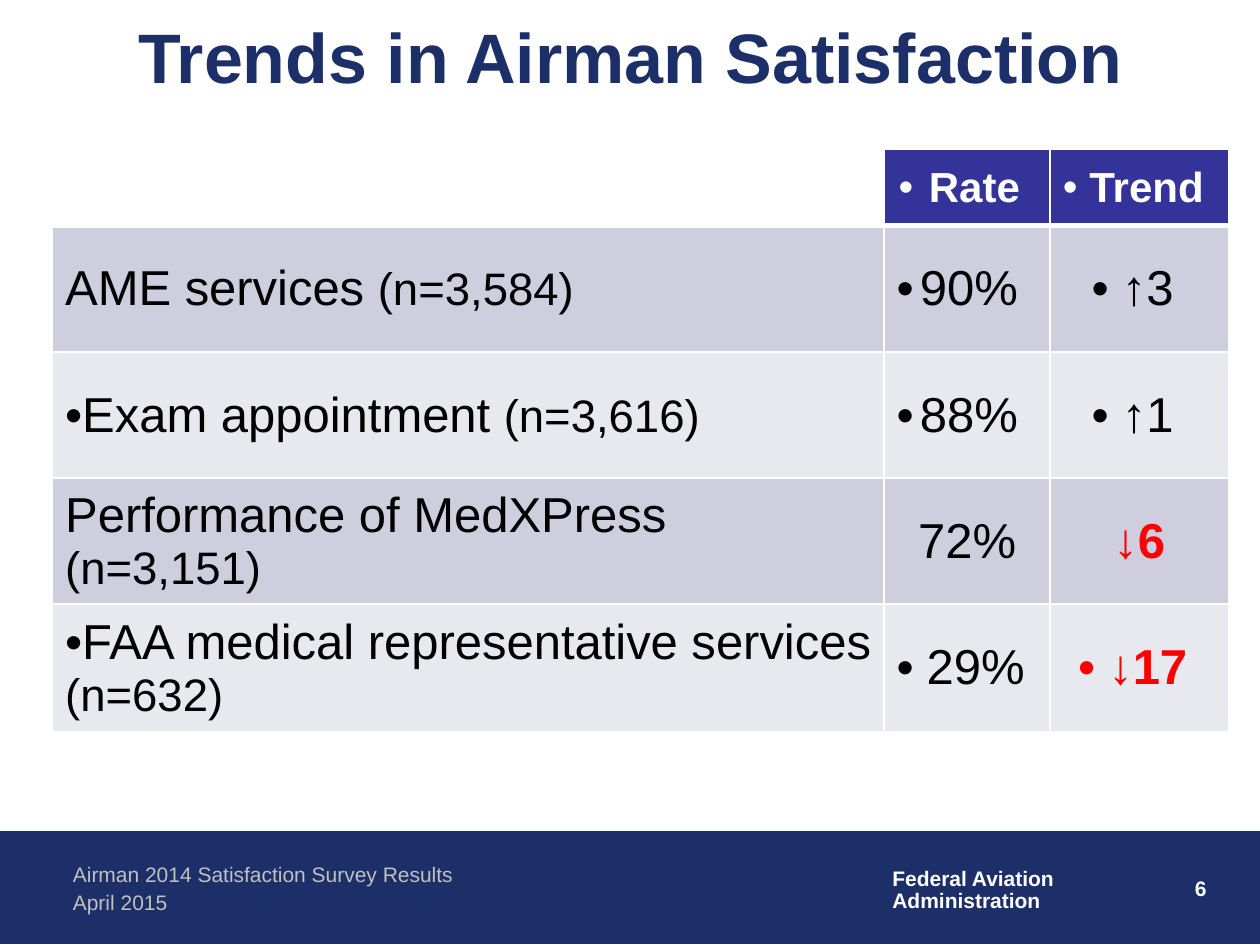
"""Build the airman satisfaction trends slide."""
from dataclasses import dataclass

from lxml.etree import SubElement
from pptx import Presentation
from pptx.dml.color import RGBColor
from pptx.enum.shapes import MSO_SHAPE
from pptx.enum.text import MSO_ANCHOR, PP_ALIGN
from pptx.oxml import parse_xml
from pptx.oxml.ns import nsdecls, qn
from pptx.util import Cm, Pt

NAVY = RGBColor(0x1D, 0x2F, 0x68)
INDIGO = RGBColor(0x33, 0x33, 0x99)
LAVENDER = RGBColor(0xCE, 0xCE, 0xDE)
MIST = RGBColor(0xE8, 0xE8, 0xEF)
SILVER = RGBColor(0xC0, 0xC0, 0xC0)
WHITE = RGBColor(0xFF, 0xFF, 0xFF)
BLACK = RGBColor(0, 0, 0)
RED = RGBColor(0xFF, 0, 0)

COLUMN_WIDTHS = (16.76, 3.35, 3.59)
ROW_HEIGHTS = (1.54, 2.55, 2.54, 2.54, 2.57)
BULLET_INDENT = Cm(-0.61)


@dataclass(frozen=True)
class Span:
    text: str
    size: float
    color: RGBColor = BLACK
    bold: bool = False


@dataclass(frozen=True)
class Rating:
    service: str
    sample: str
    rate: str
    trend: str
    service_bullet: bool = True
    score_bullet: bool = True


@dataclass(frozen=True)
class FooterText:
    lines: tuple[str, ...]
    box: tuple[float, float, float, float]
    color: RGBColor = WHITE
    bold: bool = True
    align: PP_ALIGN = PP_ALIGN.LEFT
    line_spacing: float = 1.0
    wrap: bool = True


RATINGS = (
    Rating("AME services ", "(n=3,584)", "90% ", "↑3", service_bullet=False),
    Rating("Exam appointment ", "(n=3,616)", "88% ", "↑1"),
    Rating("Performance of MedXPress ", "(n=3,151)", "72%", "↓6", False, False),
    Rating("FAA medical representative services ", "(n=632)", "29%", "↓17"),
)
FOOTER_TEXTS = (
    FooterText(("6",), (19.29, 17.52, 5.28, 1.27), align=PP_ALIGN.RIGHT),
    FooterText(("Federal Aviation", "Administration"), (17.74, 17.41, 3.81, 1.12),
               line_spacing=0.85, wrap=False),
    FooterText(("Airman 2014 Satisfaction Survey Results",),
               (1.22, 17.25, 13.28, 0.76), SILVER, False),
    FooterText(("April 2015",), (1.22, 17.81, 10.39, 0.76), SILVER, False),
)


def apply_format(target, values: dict) -> None:
    for attribute, value in values.items():
        setattr(target, attribute, value)


def write_spans(paragraph, spans: tuple[Span, ...], align: PP_ALIGN) -> None:
    paragraph.alignment = align
    for span in spans:
        run = paragraph.add_run()
        run.text = span.text
        apply_format(run.font, {"name": "Arial", "size": Pt(span.size), "bold": span.bold})
        run.font.color.rgb = span.color


def add_bullet(paragraph) -> None:
    properties = paragraph._p.get_or_add_pPr()
    properties.set("marL", "0")
    properties.set("indent", str(int(BULLET_INDENT)))
    SubElement(properties, qn("a:buFont"), typeface="Arial")
    SubElement(properties, qn("a:buChar"), char="•")


def set_borders(cell, top: float, bottom: float) -> None:
    widths = {"lnL": 1, "lnR": 1, "lnT": top, "lnB": bottom}
    properties = cell._tc.get_or_add_tcPr()
    for position, (edge, width) in enumerate(widths.items()):
        properties.insert(position, parse_xml(
            f'<a:{edge} {nsdecls("a")} w="{Pt(width)}"><a:solidFill>'
            f'<a:srgbClr val="{WHITE}"/></a:solidFill></a:{edge}>'))


def fill_cell(cell, spans: tuple[Span, ...], fill: RGBColor, bullet: bool,
              align: PP_ALIGN = PP_ALIGN.CENTER) -> None:
    cell.vertical_anchor = MSO_ANCHOR.MIDDLE
    cell.fill.solid()
    cell.fill.fore_color.rgb = fill
    paragraph = cell.text_frame.paragraphs[0]
    if bullet:
        add_bullet(paragraph)
    write_spans(paragraph, spans, align)


def add_ratings_table(slide) -> None:
    table = slide.shapes.add_table(
        len(ROW_HEIGHTS), len(COLUMN_WIDTHS), Cm(1.06), Cm(3.01),
        Cm(sum(COLUMN_WIDTHS)), Cm(sum(ROW_HEIGHTS))).table
    apply_format(table, {"first_row": False, "horz_banding": False})
    for column, width in zip(table.columns, COLUMN_WIDTHS):
        column.width = Cm(width)
    for row, height in zip(table.rows, ROW_HEIGHTS):
        row.height = Cm(height)

    table.cell(0, 0).fill.background()
    for column, heading in enumerate(("Rate", "Trend"), start=1):
        fill_cell(table.cell(0, column), (Span(heading, 24, WHITE, True),), INDIGO, True)

    for row, rating in enumerate(RATINGS, start=1):
        band = LAVENDER if row % 2 else MIST
        falling = rating.trend.startswith("↓")
        trend = Span(rating.trend, 28, RED if falling else BLACK, falling)
        fill_cell(table.cell(row, 0), (Span(rating.service, 28), Span(rating.sample, 26)),
                  band, rating.service_bullet, PP_ALIGN.LEFT)
        fill_cell(table.cell(row, 1), (Span(rating.rate, 28),), band, rating.score_bullet)
        fill_cell(table.cell(row, 2), (trend,), band, rating.score_bullet)

    for row in range(len(ROW_HEIGHTS)):
        for column in range(len(COLUMN_WIDTHS)):
            set_borders(table.cell(row, column), 3 if row == 1 else 1, 3 if row == 0 else 1)


def add_footer_band(slide) -> None:
    band = slide.shapes.add_shape(MSO_SHAPE.RECTANGLE, 0, Cm(16.76), Cm(25.4), Cm(2.26))
    band.shadow.inherit = False
    band.fill.solid()
    band.fill.fore_color.rgb = NAVY
    band.line.color.rgb = NAVY
    band.line.width = Pt(0.75)


def add_footer_text(slide, footer: FooterText) -> None:
    frame = slide.shapes.add_textbox(*map(Cm, footer.box)).text_frame
    frame.word_wrap = footer.wrap
    for index, line in enumerate(footer.lines):
        paragraph = frame.add_paragraph() if index else frame.paragraphs[0]
        paragraph.line_spacing = footer.line_spacing
        write_spans(paragraph, (Span(line, 12, footer.color, footer.bold),), footer.align)


def add_title(slide) -> None:
    title = slide.shapes.title
    apply_format(title, {"left": Cm(0.93), "top": Cm(0.26),
                         "width": Cm(23.55), "height": Cm(1.7)})
    title.text_frame.vertical_anchor = MSO_ANCHOR.MIDDLE
    heading = Span("Trends in Airman Satisfaction", 40, NAVY, True)
    write_spans(title.text_frame.paragraphs[0], (heading,), PP_ALIGN.CENTER)


def main() -> None:
    deck = Presentation()
    apply_format(deck, {"slide_width": Cm(25.4), "slide_height": Cm(19.05)})
    slide = deck.slides.add_slide(deck.slide_layouts[5])
    add_footer_band(slide)
    for footer in FOOTER_TEXTS:
        add_footer_text(slide, footer)
    add_title(slide)
    add_ratings_table(slide)
    deck.save("out.pptx")


if __name__ == "__main__":
    main()
